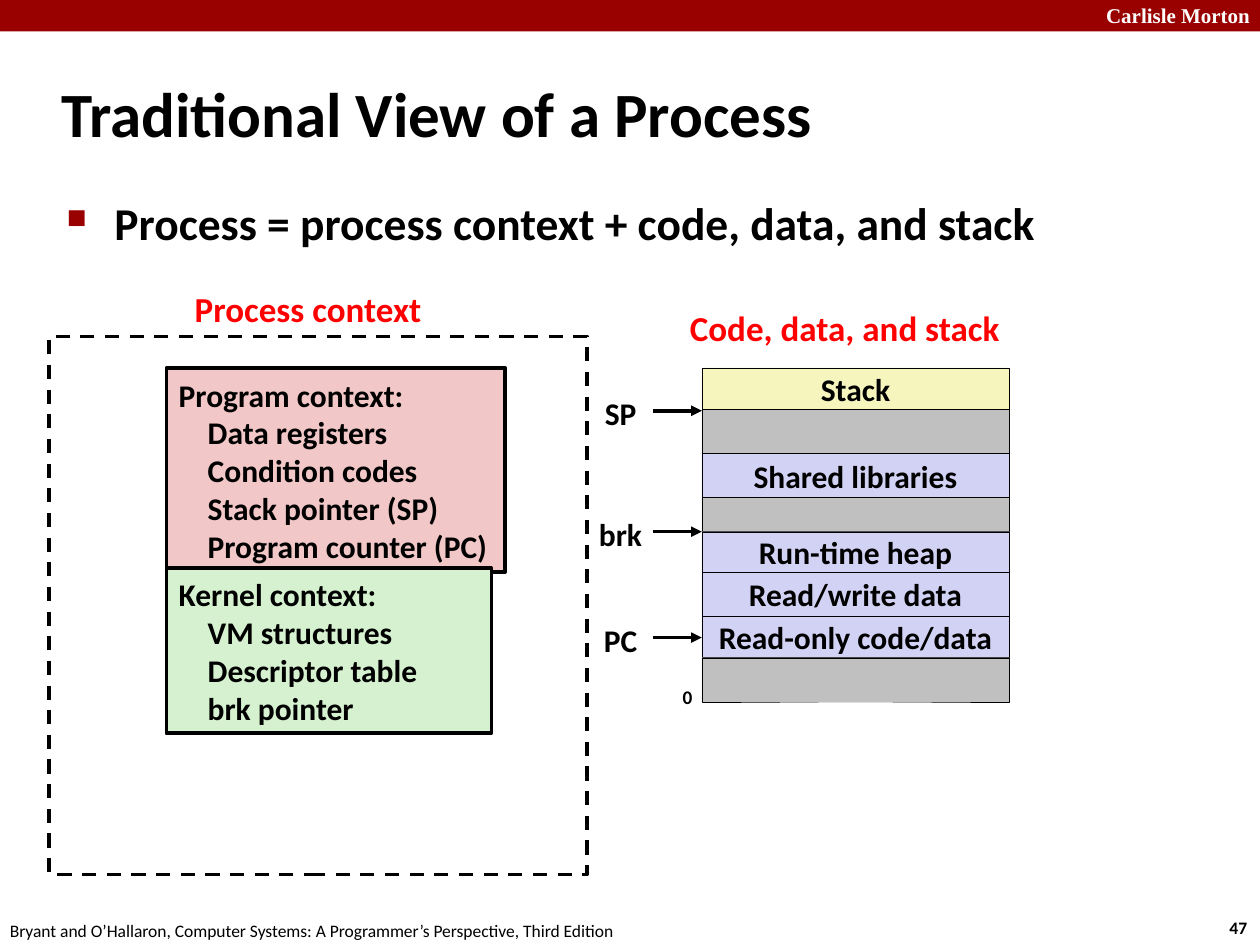
from lxml.etree import SubElement
from pptx import Presentation
from pptx.dml.color import RGBColor
from pptx.enum.dml import MSO_LINE
from pptx.enum.shapes import MSO_CONNECTOR, MSO_SHAPE
from pptx.enum.text import MSO_ANCHOR as Anchor, PP_ALIGN as Align
from pptx.oxml.ns import qn
from pptx.util import Inches, Pt

BLACK = RGBColor(0, 0, 0)
WHITE = RGBColor(255, 255, 255)
CRIMSON = RGBColor(0x99, 0, 0)
RED = RGBColor(255, 0, 0)
PINK = RGBColor(0xF1, 0xC7, 0xC7)
GREEN = RGBColor(0xD5, 0xF1, 0xCF)
YELLOW = RGBColor(0xF6, 0xF5, 0xBD)
LAVENDER = RGBColor(0xD2, 0xD2, 0xF4)
GRAY = RGBColor(0xC0, 0xC0, 0xC0)


def write_text(shape, text, size=18, color=BLACK, bold=True, font="Calibri",
               align=Align.LEFT, anchor=Anchor.MIDDLE, wrap=True, indent=0):
    frame = shape.text_frame
    frame.word_wrap = wrap
    frame.vertical_anchor = anchor
    for index, line in enumerate(text.split("\n")):
        paragraph = frame.add_paragraph() if index else frame.paragraphs[0]
        paragraph.alignment = align
        if index and indent:
            paragraph._p.get_or_add_pPr().set("marL", str(Inches(indent)))
        run = paragraph.add_run()
        run.text = line
        run.font.name = font
        run.font.size = Pt(size)
        run.font.bold = bold
        run.font.color.rgb = color


def add_label(slide, box, text, **text_format):
    shape = slide.shapes.add_textbox(*map(Inches, box))
    write_text(shape, text, **text_format)
    return shape


def add_box(slide, box, fill=None, line_width=None):
    shape = slide.shapes.add_shape(MSO_SHAPE.RECTANGLE, *map(Inches, box))
    shape.shadow.inherit = False
    if fill is None:
        shape.fill.background()
    else:
        shape.fill.solid()
        shape.fill.fore_color.rgb = fill
    if line_width is None:
        shape.line.fill.background()
    else:
        shape.line.color.rgb = BLACK
        shape.line.width = Pt(line_width)
    return shape


def add_arrow(slide, left, right, y):
    arrow = slide.shapes.add_connector(
        MSO_CONNECTOR.STRAIGHT, Inches(left), Inches(y), Inches(right), Inches(y))
    arrow.line.color.rgb = BLACK
    arrow.line.width = Pt(2)
    SubElement(arrow.line._get_or_add_ln(), qn("a:tailEnd"), type="triangle")
    SubElement(arrow._element.spPr, qn("a:effectLst"))


def add_frame(slide, width, height):
    add_box(slide, (0, 0, width, 0.25), CRIMSON)
    add_label(slide, (8.64, -0.03, 1.38, 0.3), "Carlisle Morton", size=12,
              color=WHITE, font="Times New Roman", align=Align.RIGHT)
    add_label(slide, (9.66, height - 0.27, 0.37, 0.27), "47", size=10, wrap=False)
    add_label(slide, (-0.02, height - 0.25, 5.08, 0.27),
              "Bryant and O’Hallaron, Computer Systems: "
              "A Programmer’s Perspective, Third Edition",
              size=10, bold=False, wrap=False)


def add_bullet(slide, box, text):
    shape = add_label(slide, box, text, size=26, anchor=Anchor.TOP)
    properties = shape.text_frame.paragraphs[0]._p.get_or_add_pPr()
    hanging = Inches(0.38)
    properties.set("marL", str(hanging))
    properties.set("indent", str(-hanging))
    bullet_color = SubElement(properties, qn("a:buClr"))
    SubElement(bullet_color, qn("a:srgbClr"), val=str(CRIMSON))
    SubElement(properties, qn("a:buSzPct"), val="60000")
    SubElement(properties, qn("a:buChar"), char="■")


def add_process_context(slide, left, top, width, height):
    panel_left = left + 0.93
    program = add_box(slide, (panel_left, top + 0.25, 2.69, 1.62), PINK, 2)
    write_text(program, "Program context:\nData registers\nCondition codes\n"
                        "Stack pointer (SP)\nProgram counter (PC)", indent=0.23)
    kernel = add_box(slide, (panel_left, top + 1.84, 2.58, 1.31), GREEN, 2)
    write_text(kernel, "Kernel context:\nVM structures\nDescriptor table\nbrk pointer",
               indent=0.23)
    add_label(slide, (left + 1.04, top - 0.44, 2.03, 0.44), "Process context",
              size=20, color=RED, align=Align.CENTER, wrap=False)
    border = add_box(slide, (left, top, width, height), line_width=2)
    border.line.dash_style = MSO_LINE.DASH


def add_address_space(slide, left, top, width):
    add_label(slide, (left - 0.21, top - 0.54, 2.69, 0.44), "Code, data, and stack",
              size=20, color=RED, align=Align.CENTER, wrap=False)
    segments = [
        ("Stack", YELLOW, 0.33),
        ("", GRAY, 0.35),
        ("Shared libraries", LAVENDER, 0.35),
        ("", GRAY, 0.27),
        ("Run-time heap", LAVENDER, 0.32),
        ("Read/write data", LAVENDER, 0.35),
        ("Read-only code/data", LAVENDER, 0.33),
        ("", GRAY, 0.35),
    ]
    y = top
    for name, fill, height in segments:
        segment = add_box(slide, (left, y, width, height), fill, 0.25)
        if name:
            write_text(segment, name, align=Align.CENTER, wrap=False)
        y += height
    add_label(slide, (left - 0.25, y - 0.18, 0.28, 0.29), "0", size=11,
              anchor=Anchor.TOP, wrap=False)

    for name, offset in (("SP", 0.34), ("brk", 1.3), ("PC", 2.14)):
        pointer_y = top + offset
        add_label(slide, (left - 0.92, pointer_y - 0.18, 0.55, 0.4), name,
                  align=Align.CENTER, wrap=False)
        add_arrow(slide, left - 0.39, left, pointer_y)


def main():
    presentation = Presentation()
    presentation.slide_width = Inches(10)
    presentation.slide_height = Inches(7.5)
    slide = presentation.slides.add_slide(presentation.slide_layouts[6])
    add_frame(slide, 10, 7.5)
    add_label(slide, (0.39, 0.48, 8.3, 0.83), "Traditional View of a Process", size=36)
    add_bullet(slide, (0.43, 1.5, 8.64, 0.6),
               "Process = process context + code, data, and stack")
    add_process_context(slide, 0.39, 2.67, 4.27, 4.27)
    add_address_space(slide, 5.57, 2.92, 2.44)
    presentation.save("out.pptx")


if __name__ == "__main__":
    main()
